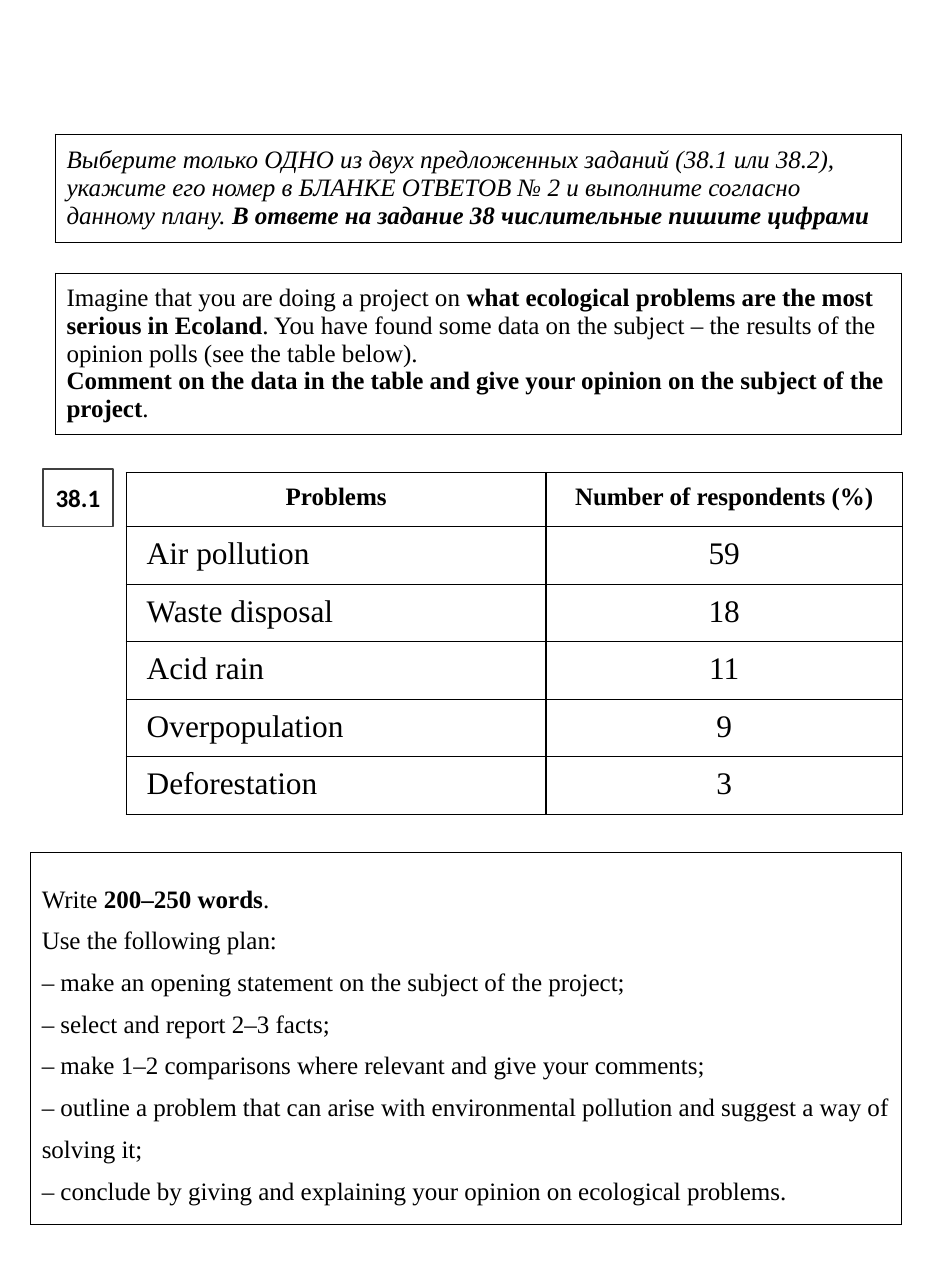
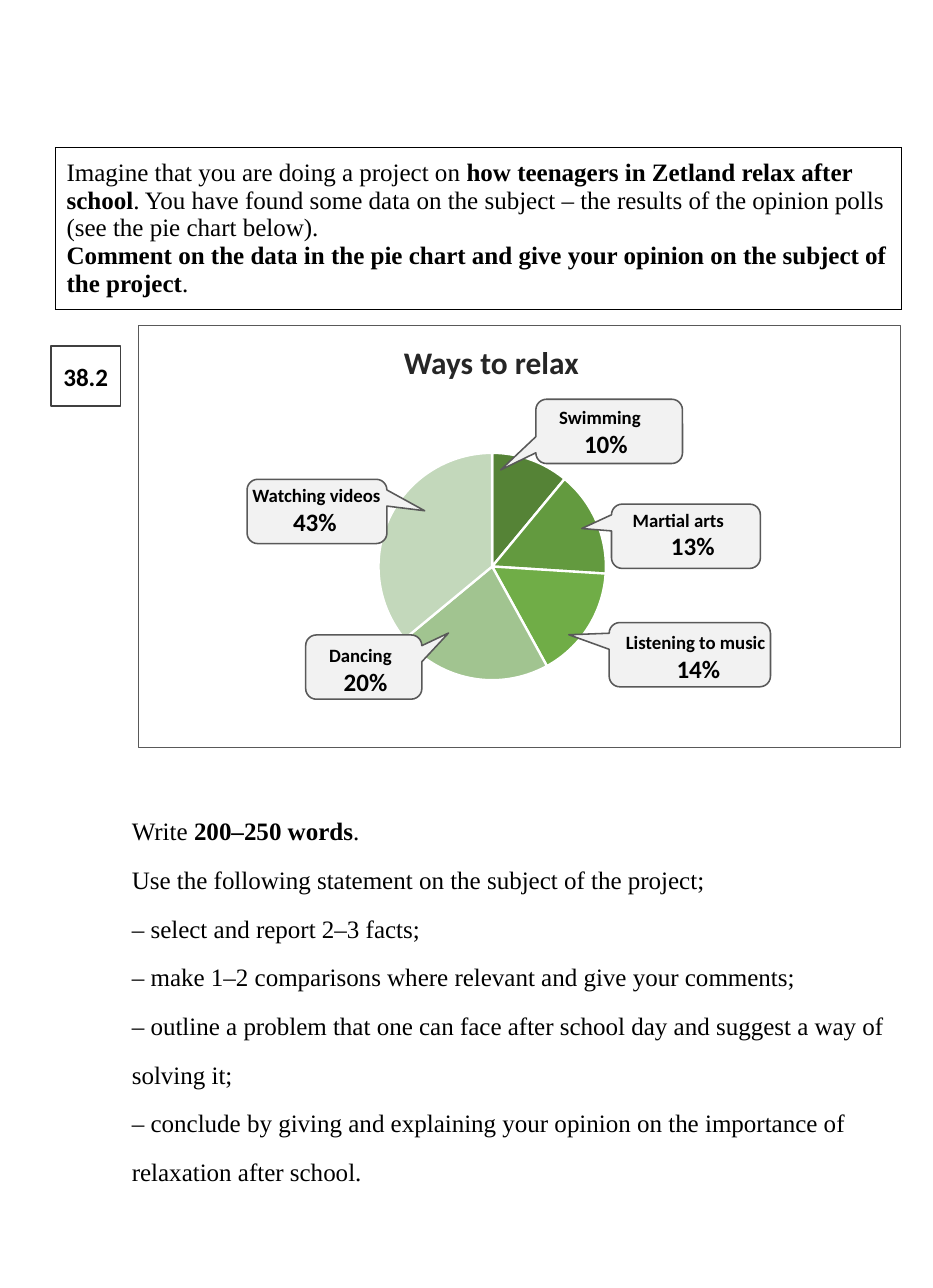
from lxml import etree
from pptx import Presentation
from pptx.chart.data import CategoryChartData
from pptx.dml.color import RGBColor
from pptx.enum.chart import XL_CHART_TYPE as ChartType
from pptx.enum.shapes import MSO_SHAPE as Shape
from pptx.enum.text import MSO_ANCHOR as Anchor, PP_ALIGN as Align
from pptx.oxml import parse_xml
from pptx.oxml.ns import nsdecls, qn
from pptx.util import Inches, Pt

COLORS = {
    "text": "000000", "title": "262626", "paper": "FFFFFF",
    "badge_line": "404040", "callout": "F2F2F2", "callout_line": "595959",
}
SLICES = ["558336", "639A3F", "70AD47", "A1C490", "C3D8BB"]
SERIF, SANS = "Times New Roman", "Calibri"
BOX_LEFT, BOX_WIDTH = 0.49, 7.5


def rgb(name):
    return RGBColor.from_string(COLORS.get(name, name))


class ExamSheet:
    def __init__(self):
        self.presentation = Presentation()
        self.presentation.slide_width = Inches(8.27)
        self.presentation.slide_height = Inches(11.42)
        self.slide = None

    def new_slide(self, has_title=False):
        layout = self.presentation.slide_layouts[5 if has_title else 6]
        self.slide = self.presentation.slides.add_slide(layout)

    def fill_text(self, frame, texts, sizes=(16,), font=SERIF, color="text",
                  bold=False, italic=False, align=Align.LEFT, spacing=None):
        frame.word_wrap = True
        for index, text in enumerate(texts):
            paragraph = frame.paragraphs[0] if index == 0 else frame.add_paragraph()
            paragraph.alignment = align
            if spacing:
                paragraph.line_spacing = spacing
            paragraph.font.size = Pt(sizes[index % len(sizes)])
            paragraph.font.name = font
            paragraph.font.italic = italic
            paragraph.font.color.rgb = rgb(color)
            parts = text.split("**")
            if len(parts) == 1:
                paragraph.font.bold = bold
            for position, part in enumerate(parts):
                if part:
                    run = paragraph.add_run()
                    run.text = part
                    if len(parts) > 1:
                        run.font.bold = position % 2 == 1

    def title(self, text, left, top, width, height):
        title = self.slide.shapes.title
        title.left, title.top = Inches(left), Inches(top)
        title.width, title.height = Inches(width), Inches(height)
        title.text_frame.vertical_anchor = Anchor.TOP
        self.fill_text(title.text_frame, [text], (20,), SANS, "title", True,
                       align=Align.CENTER)

    def table(self, left, top, widths, heights):
        table = self.slide.shapes.add_table(
            len(heights), len(widths), Inches(left), Inches(top),
            Inches(sum(widths)), Inches(sum(heights))).table
        table.first_row = table.horz_banding = False
        for column, width in zip(table.columns, widths):
            column.width = Inches(width)
        for row, height in zip(table.rows, heights):
            row.height = Inches(height)
        return table

    def style_cell(self, cell, line_width):
        properties = cell._tc.get_or_add_tcPr()
        for side in ("lnL", "lnR", "lnT", "lnB"):
            properties.append(parse_xml(
                f'<a:{side} {nsdecls("a")} w="{Pt(line_width)}"><a:solidFill>'
                f'<a:srgbClr val="{COLORS["text"]}"/></a:solidFill></a:{side}>'))
        cell.fill.background()

    def text_box_table(self, top, height, texts, left=BOX_LEFT, width=BOX_WIDTH,
                       line_width=0.5, **style):
        cell = self.table(left, top, [width], [height]).cell(0, 0)
        self.style_cell(cell, line_width)
        cell.vertical_anchor = Anchor.MIDDLE
        self.fill_text(cell.text_frame, texts, **style)

    def data_table(self, left, top, widths, heights, rows):
        table = self.table(left, top, widths, heights)
        for row_index, values in enumerate(rows):
            header = row_index == 0
            for column_index, value in enumerate(values):
                cell = table.cell(row_index, column_index)
                self.style_cell(cell, 1)
                cell.margin_left = cell.margin_right = Inches(0.18)
                cell.margin_top = cell.margin_bottom = Inches(0.09)
                centred = header or column_index > 0
                self.fill_text(cell.text_frame, [value], (16 if header else 20,), bold=header,
                               align=Align.CENTER if centred else Align.LEFT)

    def shape(self, kind, left, top, width, height, fill, line, line_width=1):
        shape = self.slide.shapes.add_shape(
            kind, Inches(left), Inches(top), Inches(width), Inches(height))
        shape.shadow.inherit = False
        if fill:
            shape.fill.solid()
            shape.fill.fore_color.rgb = rgb(fill)
        else:
            shape.fill.background()
        shape.line.color.rgb = rgb(line)
        shape.line.width = Pt(line_width)
        return shape

    def badge(self, text, left, top, height):
        badge = self.shape(Shape.RECTANGLE, left, top, 0.62, height, "paper", "badge_line")
        badge.text_frame.vertical_anchor = Anchor.MIDDLE
        self.fill_text(badge.text_frame, [text], font=SANS, bold=True, align=Align.CENTER)

    def callout(self, name, share, left, top, width, tip, inset, share_indent):
        callout = self.shape(Shape.ROUNDED_RECTANGULAR_CALLOUT, left, top, width, 0.57,
                             "callout", "callout_line")
        callout.adjustments[0], callout.adjustments[1] = tip
        frame = callout.text_frame
        frame.margin_left, frame.margin_top = (Inches(length) for length in inset)
        frame.margin_right = frame.margin_bottom = 0
        frame.vertical_anchor = Anchor.TOP
        self.fill_text(frame, [name, share], (12, 16), SANS, bold=True)
        frame.paragraphs[1]._p.get_or_add_pPr().set("marL", str(Inches(share_indent)))

    def text(self, left, top, width, height, texts, **style):
        box = self.slide.shapes.add_textbox(
            Inches(left), Inches(top), Inches(width), Inches(height))
        self.fill_text(box.text_frame, texts, **style)

    def pie(self, left, top, width, height, values, plot):
        data = CategoryChartData()
        data.categories = [str(number + 1) for number in range(len(values))]
        data.add_series("Series 1", values)
        chart = self.slide.shapes.add_chart(
            ChartType.PIE, Inches(left), Inches(top), Inches(width), Inches(height), data).chart
        chart.has_legend = chart.has_title = False
        chart.font.name, chart.font.size = SANS, Pt(10)
        chart.font.color.rgb = rgb("text")
        chart.plots[0].vary_by_categories = True
        for index, color in enumerate(SLICES):
            point = chart.plots[0].series[0].points[index].format
            point.fill.solid()
            point.fill.fore_color.rgb = rgb(color)
            point.line.color.rgb = rgb("paper")
            point.line.width = Pt(1.5)
        area = chart._chartSpace.find(".//" + qn("c:plotArea"))
        for old_layout in area.findall(qn("c:layout")):
            area.remove(old_layout)
        layout = etree.Element(qn("c:layout"))
        manual = etree.SubElement(layout, qn("c:manualLayout"))
        settings = [("layoutTarget", "inner"), ("xMode", "edge"), ("yMode", "edge")]
        for tag, value in settings + list(zip("xywh", plot)):
            etree.SubElement(manual, qn("c:" + tag)).set("val", str(value))
        area.insert(0, layout)


def task_texts(topic, source):
    return [
        f"Imagine that you are doing a project on **{topic}**. You have found some data on "
        f"the subject – the results of the opinion polls (see the {source} below).",
        f"**Comment on the data in the {source} and give your opinion on the subject of "
        "the project**.",
    ]


def plan_texts(opening, problem, opinion):
    return [
        "Write **200–250 words**.",
        *opening,
        "– select and report 2–3 facts;",
        "– make 1–2 comparisons where relevant and give your comments;",
        f"– outline a problem that {problem} and suggest a way of solving it;",
        f"– conclude by giving and explaining your opinion on {opinion}.",
    ]


def build_table_task(sheet):
    sheet.new_slide()
    sheet.text_box_table(1.19, 0.96, [
        "Выберите только ОДНО из двух предложенных заданий (38.1 или 38.2),",
        "укажите его номер в БЛАНКЕ ОТВЕТОВ № 2 и выполните согласно данному плану. "
        "**В ответе на задание 38 числительные пишите цифрами**",
    ], line_width=1, italic=True)
    sheet.text_box_table(2.42, 1.43, task_texts(
        "what ecological problems are the most serious in Ecoland", "table"))
    sheet.text_box_table(7.56, 3.3, plan_texts(
        ["Use the following plan:",
         "– make an opening statement on the subject of the project;"],
        "can arise with environmental pollution", "ecological problems",
    ), left=0.27, width=7.72, spacing=1.5)
    sheet.badge("38.1", 0.38, 4.16, 0.51)
    sheet.data_table(1.12, 4.19, [3.72, 3.16], [0.48] + [0.51] * 5, [
        ("Problems", "Number of respondents (%)"),
        ("Air pollution", "59"),
        ("Waste disposal", "18"),
        ("Acid rain", "11"),
        ("Overpopulation", "9"),
        ("Deforestation", "3"),
    ])


def build_chart_task(sheet):
    sheet.new_slide(has_title=True)
    sheet.text_box_table(1.31, 1.43, task_texts(
        "how teenagers in Zetland relax after school", "pie chart"))
    sheet.badge("38.2", 0.45, 3.07, 0.53)
    sheet.shape(Shape.RECTANGLE, 1.23, 2.89, 6.75, 3.74, None, "callout_line", 0.75)
    sheet.title("Ways to relax", 1.79, 2.99, 5.13, 0.44)
    sheet.pie(2.27, 3.28, 3.46, 3.2, [11, 15, 16, 22, 36], (0.23, 0.23, 0.75, 0.63))
    callouts = [
        ("Swimming", "10%", 4.75, 3.54, 1.3, (-0.74, 0.6), (0.18, 0.03), 0.22),
        ("Martial arts", "13%", 5.42, 4.47, 1.32, (-0.7, -0.12), (0.16, 0.01), 0.34),
        ("Listening to music", "14%", 5.4, 5.52, 1.43, (-0.75, -0.31), (0.12, 0.05), 0.45),
        ("Dancing", "20%", 2.71, 5.63, 1.03, (0.73, -0.53), (0.18, 0.05), 0.13),
        ("Watching videos", "43%", 2.19, 4.25, 1.24, (0.77, -0.01), (0.02, 0.01), 0.36),
    ]
    for callout in callouts:
        sheet.callout(*callout)
    sheet.text(1.07, 7.02, 6.91, 3.28, plan_texts(
        ["Use the following statement on the subject of the project;"],
        "one can face after school day", "the importance of relaxation after school",
    ), spacing=1.62)


def main():
    sheet = ExamSheet()
    build_table_task(sheet)
    build_chart_task(sheet)
    sheet.presentation.save("out.pptx")


if __name__ == "__main__":
    main()
